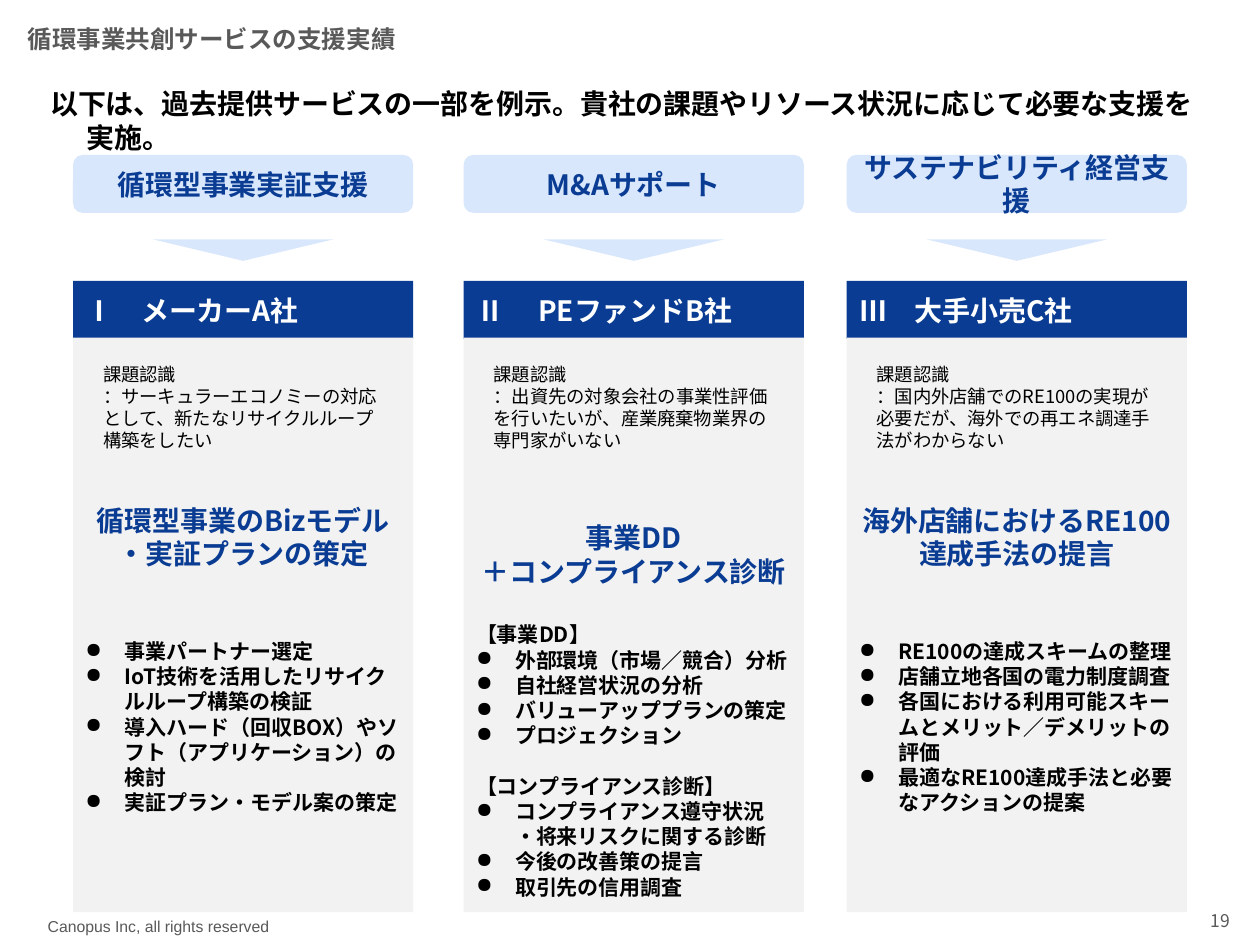
from lxml.etree import SubElement
from pptx import Presentation
from pptx.dml.color import RGBColor
from pptx.enum.shapes import MSO_SHAPE as SHAPE
from pptx.enum.text import MSO_ANCHOR as ANCHOR, PP_ALIGN as ALIGN
from pptx.oxml.ns import qn
from pptx.util import Inches, Pt

FONT = "Noto Sans CJK JP"
NAVY, PALE, PANEL = "093C92", "D9E7FD", "F2F2F2"
GRAY, BLACK, WHITE = "595959", "000000", "FFFFFF"
COLUMN_W = 2.7
BLANK_LINE = 0.27

COLUMNS = [
    dict(
        left=0.58, service="循環型事業実証支援", client="Ⅰ　メーカーA社",
        issue="サーキュラーエコノミーの対応として、新たなリサイクルループ構築をしたい",
        headline="循環型事業のBizモデル\n・実証プランの策定", lines_above=2, gap=39,
        groups=[("", ["事業パートナー選定",
                      "IoT技術を活用したリサイクルループ構築の検証",
                      "導入ハード（回収BOX）やソフト（アプリケーション）の検討",
                      "実証プラン・モデル案の策定"])],
    ),
    dict(
        left=3.68, service="M&Aサポート", client="Ⅱ　 PEファンドB社",
        issue="出資先の対象会社の事業性評価を行いたいが、産業廃棄物業界の専門家がいない",
        headline="事業DD\n＋コンプライアンス診断", lines_above=5, gap=19.5,
        groups=[("【事業DD】", ["外部環境（市場／競合）分析", "自社経営状況の分析",
                             "バリューアッププランの策定", "プロジェクション"]),
                ("【コンプライアンス診断】", ["コンプライアンス遵守状況\n・将来リスクに関する診断",
                                   "今後の改善策の提言", "取引先の信用調査"])],
    ),
    dict(
        left=6.72, service="サステナビリティ経営支援", client="Ⅲ　大手小売C社",
        issue="国内外店舗でのRE100の実現が必要だが、海外での再エネ調達手法がわからない",
        headline="海外店舗におけるRE100達成手法の提言", lines_above=2, gap=39,
        groups=[("", ["RE100の達成スキームの整理", "店舗立地各国の電力制度調査",
                      "各国における利用可能スキームとメリット／デメリットの評価",
                      "最適なRE100達成手法と必要なアクションの提案"])],
    ),
]


def rgb(color):
    return RGBColor.from_string(color)


def write(tf, text, size=12, color=BLACK, bold=True, font=FONT, align=ALIGN.LEFT,
          before=0, margin=0, indent=0, bullet=False):
    p = tf.paragraphs[0]
    if p.runs:
        p = tf.add_paragraph()
    p.text = text
    p.alignment = align
    p.space_before = Pt(before)
    pPr = p._p.get_or_add_pPr()
    pPr.set("marL", str(Inches(margin)))
    pPr.set("indent", str(Inches(indent)))
    if bullet:
        SubElement(SubElement(pPr, qn("a:buClr")), qn("a:srgbClr"), val=BLACK)
        SubElement(pPr, qn("a:buChar"), char="●")
    for r in p.runs:
        r.font.size, r.font.bold, r.font.name = Pt(size), bold, font
        r.font.color.rgb = rgb(color)
        SubElement(r._r.get_or_add_rPr(), qn("a:ea"), typeface=font)


def add_text(s, box, text, anchor=ANCHOR.TOP, **fmt):
    tf = s.shapes.add_textbox(*map(Inches, box)).text_frame
    tf.word_wrap = True
    tf.vertical_anchor = anchor
    write(tf, text, **fmt)


def add_block(s, kind, box, fill, corner=None):
    sp = s.shapes.add_shape(kind, *map(Inches, box))
    sp.shadow.inherit = False
    sp.fill.solid()
    sp.fill.fore_color.rgb = rgb(fill)
    sp.line.fill.background()
    if corner is not None:
        sp.adjustments[0] = corner
    sp.text_frame.word_wrap = True
    sp.text_frame.vertical_anchor = ANCHOR.MIDDLE
    return sp


def add_panel(s, column):
    box = (column["left"], 2.68, COLUMN_W, 4.56)
    tf = add_block(s, SHAPE.ROUNDED_RECTANGLE, box, PANEL, corner=0).text_frame
    tf.margin_top = Inches(0.05 + BLANK_LINE * column["lines_above"])
    write(tf, column["headline"], size=16, color=NAVY, align=ALIGN.CENTER)
    before = column["gap"]
    for heading, items in column["groups"]:
        if heading:
            write(tf, heading, before=before)
            before = 0
        for item in items:
            write(tf, item, before=before, margin=0.31, indent=-0.31, bullet=True)
            before = 0
        before = 14.5


def add_column(s, column):
    left = column["left"]
    service = add_block(s, SHAPE.ROUNDED_RECTANGLE, (left, 1.23, COLUMN_W, 0.46), PALE)
    write(service.text_frame, column["service"], size=16, color=NAVY, align=ALIGN.CENTER)

    arrow_w = 1.43
    arrow_box = (left + (COLUMN_W - arrow_w) / 2, 1.9, arrow_w, 0.17)
    add_block(s, SHAPE.ISOSCELES_TRIANGLE, arrow_box, PALE).rotation = 180

    client = add_block(s, SHAPE.ROUNDED_RECTANGLE, (left, 2.23, COLUMN_W, 0.46), NAVY, corner=0)
    write(client.text_frame, column["client"], size=16, color=WHITE)

    add_panel(s, column)
    issue_w = 2.42
    add_text(s, (left + (COLUMN_W - issue_w) / 2, 2.83, issue_w, 0.81),
             "課題認識\n：" + column["issue"], size=10.5, bold=False)


def main():
    prs = Presentation()
    prs.slide_width, prs.slide_height = Inches(10), Inches(7.5)
    s = prs.slides.add_slide(prs.slide_layouts[6])

    add_text(s, (0.28, 7.23, 3.59, 0.25), "Canopus Inc, all rights reserved",
             size=9, color=GRAY, bold=False, font="Arial")
    add_text(s, (9.26, 7.12, 0.6, 0.37), "19", anchor=ANCHOR.MIDDLE,
             size=10, color=GRAY, bold=False, align=ALIGN.RIGHT)
    add_text(s, (0, 0.15, 5.96, 0.32), "循環事業共創サービスの支援実績",
             anchor=ANCHOR.MIDDLE, size=14, color=GRAY, margin=0.12)
    add_text(s, (0.3, 0.64, 9.46, 0.37),
             "以下は、過去提供サービスの一部を例示。貴社の課題やリソース状況に応じて必要な支援を実施。",
             size=16, margin=0.29, indent=-0.29)
    for column in COLUMNS:
        add_column(s, column)
    prs.save("out.pptx")


if __name__ == "__main__":
    main()
